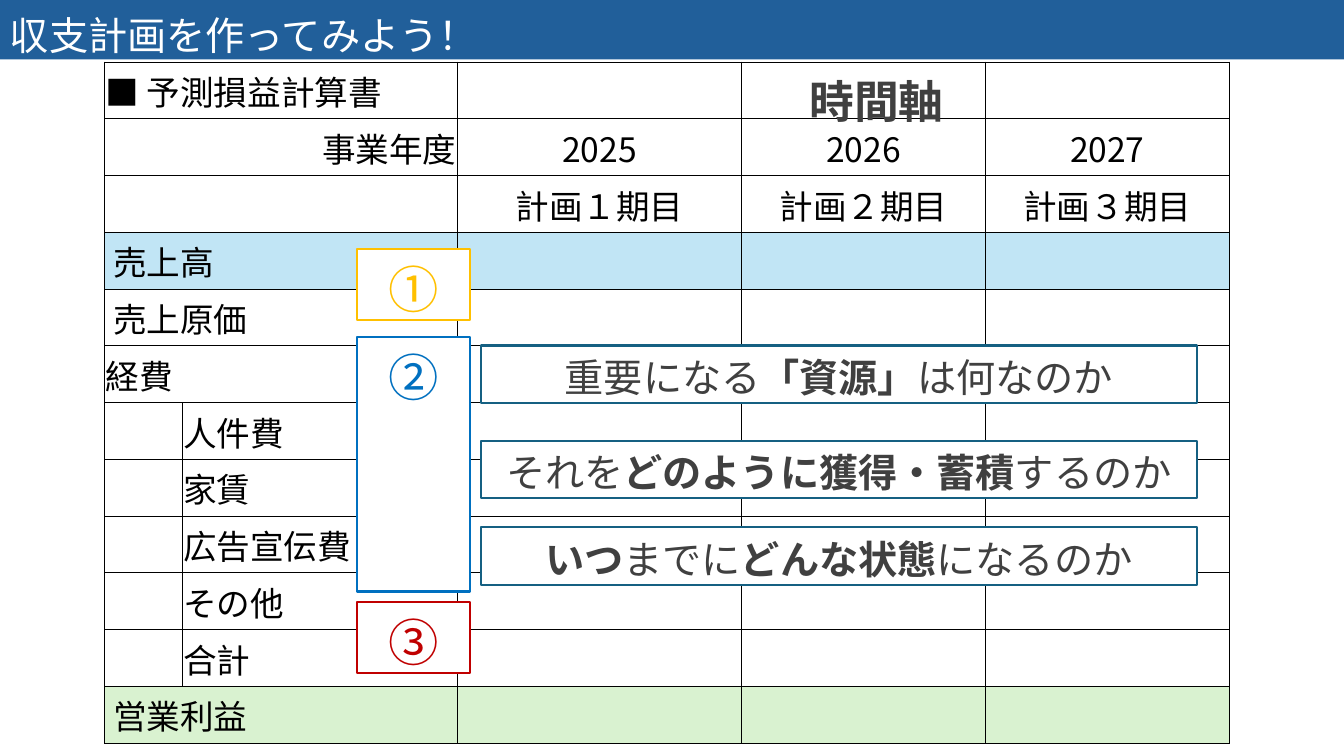
import lxml.etree
import pptx
import pptx.dml.color
import pptx.enum.shapes
import pptx.enum.text
import pptx.oxml.ns
import pptx.util
from dataclasses import dataclass

Pt = pptx.util.Pt
ALIGN = pptx.enum.text.PP_ALIGN
ANCHOR = pptx.enum.text.MSO_ANCHOR
qn = pptx.oxml.ns.qn


@dataclass
class Theme:
    font: str = "Noto Sans CJK JP"
    white: str = "FFFFFF"
    black: str = "000000"
    text: str = "404040"
    banner: str = "215F9A"
    question: str = "156082"
    sales: str = "C1E5F5"
    profit: str = "D9F2D0"
    yellow: str = "FFC000"
    blue: str = "0070C0"
    red: str = "C00000"
    table_size: float = 24
    title_size: float = 28
    axis_size: float = 32
    number_size: float = 36
    grid_width: float = 0.75
    box_width: float = 1.5
    leading: float = 1.28


def rgb(color):
    return pptx.dml.color.RGBColor.from_string(color)


def apply(obj, formats):
    for name, value in formats.items():
        setattr(obj, name, value)


def margins(left, top, right, bottom):
    return {"margin_left": Pt(left), "margin_top": Pt(top),
            "margin_right": Pt(right), "margin_bottom": Pt(bottom)}


class Deck:
    def __init__(self, prs, theme):
        self.theme = theme
        self.s = prs.slides.add_slide(prs.slide_layouts[6])

    def add_text(self, tf, runs, size, color, align=ALIGN.LEFT, leading=None):
        """Fill the first paragraph with (text, bold) runs."""
        p = tf.paragraphs[0]
        apply(p, {"alignment": align, "line_spacing": leading})
        for text, bold in runs:
            r = p.add_run()
            r.text = text
            apply(r.font, {"name": self.theme.font, "size": Pt(size), "bold": bold})
            r.font.color.rgb = rgb(color)
            ea = lxml.etree.SubElement(r._r.get_or_add_rPr(), qn("a:ea"))
            ea.set("typeface", self.theme.font)

    def rect(self, left, top, width, height, fill, line=None):
        sp = self.s.shapes.add_shape(pptx.enum.shapes.MSO_SHAPE.RECTANGLE,
                                     Pt(left), Pt(top), Pt(width), Pt(height))
        sp.shadow.inherit = False
        sp.fill.solid()
        sp.fill.fore_color.rgb = rgb(fill)
        if line:
            sp.line.color.rgb = rgb(line)
            sp.line.width = Pt(self.theme.box_width)
        else:
            sp.line.fill.background()
        return sp

    def banner(self, width, height, text):
        tf = self.rect(0, 0, width, height, self.theme.banner).text_frame
        apply(tf, {"word_wrap": True, "vertical_anchor": ANCHOR.MIDDLE,
                   **margins(7.2, 11.5, 7.2, 3.6)})
        self.add_text(tf, [(text, False)], self.theme.title_size, self.theme.white)

    def box(self, left, top, width, height, line, runs, size, color):
        tf = self.rect(left, top, width, height, self.theme.white, line).text_frame
        apply(tf, {"word_wrap": True, "vertical_anchor": ANCHOR.TOP})
        self.add_text(tf, runs, size, color, ALIGN.CENTER, Pt(size * self.theme.leading))

    def label(self, left, top, width, height, text):
        tf = self.s.shapes.add_textbox(Pt(left), Pt(top), Pt(width), Pt(height)).text_frame
        tf.word_wrap = False
        size = self.theme.axis_size
        self.add_text(tf, [(text, True)], size, self.theme.text,
                      leading=Pt(size * self.theme.leading))

    def borders(self, cell):
        tcPr = cell._tc.get_or_add_tcPr()
        for side in "LRTB":
            ln = lxml.etree.SubElement(tcPr, qn(f"a:ln{side}"))
            ln.set("w", str(Pt(self.theme.grid_width)))
            fill = lxml.etree.SubElement(ln, qn("a:solidFill"))
            lxml.etree.SubElement(fill, qn("a:srgbClr")).set("val", self.theme.black)

    def table(self, left, top, widths, row_height, rows, fills, indented):
        tbl = self.s.shapes.add_table(len(rows), len(widths), Pt(left), Pt(top),
                                      Pt(sum(widths)), Pt(row_height * len(rows))).table
        apply(tbl, {"first_row": False, "horz_banding": False})
        for column, width in zip(tbl.columns, widths):
            column.width = Pt(width)
        for i, (heading, align, values) in enumerate(rows):
            tbl.rows[i].height = Pt(row_height)
            first = 1 if i in indented else 0
            texts = {first: heading, **dict(enumerate(values, 2))}
            for j in range(len(widths)):
                cell = tbl.cell(i, j)
                self.borders(cell)
                cell.fill.solid()
                cell.fill.fore_color.rgb = rgb(fills.get(i, self.theme.white))
                apply(cell, {"vertical_anchor": ANCHOR.MIDDLE, **margins(0.7, 0.7, 0.7, 0)})
                if texts.get(j):
                    self.add_text(cell.text_frame, [(texts[j], False)],
                                  self.theme.table_size, self.theme.black,
                                  ALIGN.CENTER if j > 1 else align)
            if not first:
                tbl.cell(i, 0).merge(tbl.cell(i, 1))


def main():
    prs = pptx.Presentation()
    apply(prs, {"slide_width": Pt(960), "slide_height": Pt(540)})
    theme = Theme()
    deck = Deck(prs, theme)

    # Title banner
    deck.banner(960, 42.5, "収支計画を作ってみよう！")

    # Projected income statement
    left, right = ALIGN.LEFT, ALIGN.RIGHT
    rows = [("■ 予測損益計算書", left, []),
            ("事業年度", right, ["2025", "2026", "2027"]),
            ("", left, ["計画１期目", "計画２期目", "計画３期目"])]
    rows += [(name, left, []) for name in (
        " 売上高", " 売上原価", "経費", "人件費", "家賃", "広告宣伝費", "その他", "合計",
        " 営業利益")]
    deck.table(74.7, 44.4, [55.4, 196.6, 203, 174.2, 174.2], 40.56, rows,
               {3: theme.sales, 11: theme.profit}, range(6, 11))

    # Numbered markers
    for number, top, height, color in (("①", 177.8, 51, theme.yellow),
                                       ("②", 241, 181.6, theme.blue),
                                       ("③", 430, 51, theme.red)):
        deck.box(255, top, 80.8, height, color, [(number, False)],
                 theme.number_size, color)

    # Time axis label
    deck.label(571, 46.8, 111.6, 46, "時間軸")

    # Key questions
    questions = (
        (246.8, [("重要になる", False), ("「資源」", True), ("は何なのか", False)]),
        (314.8, [("それを", False), ("どのように獲得・蓄積", True), ("するのか", False)]),
        (376.4, [("いつ", True), ("までに", False), ("どんな状態", True),
                 ("になるのか", False)]))
    for top, runs in questions:
        deck.box(343.6, top, 511.2, 41.2, theme.question, runs,
                 theme.title_size, theme.text)

    prs.save("out.pptx")


if __name__ == "__main__":
    main()
